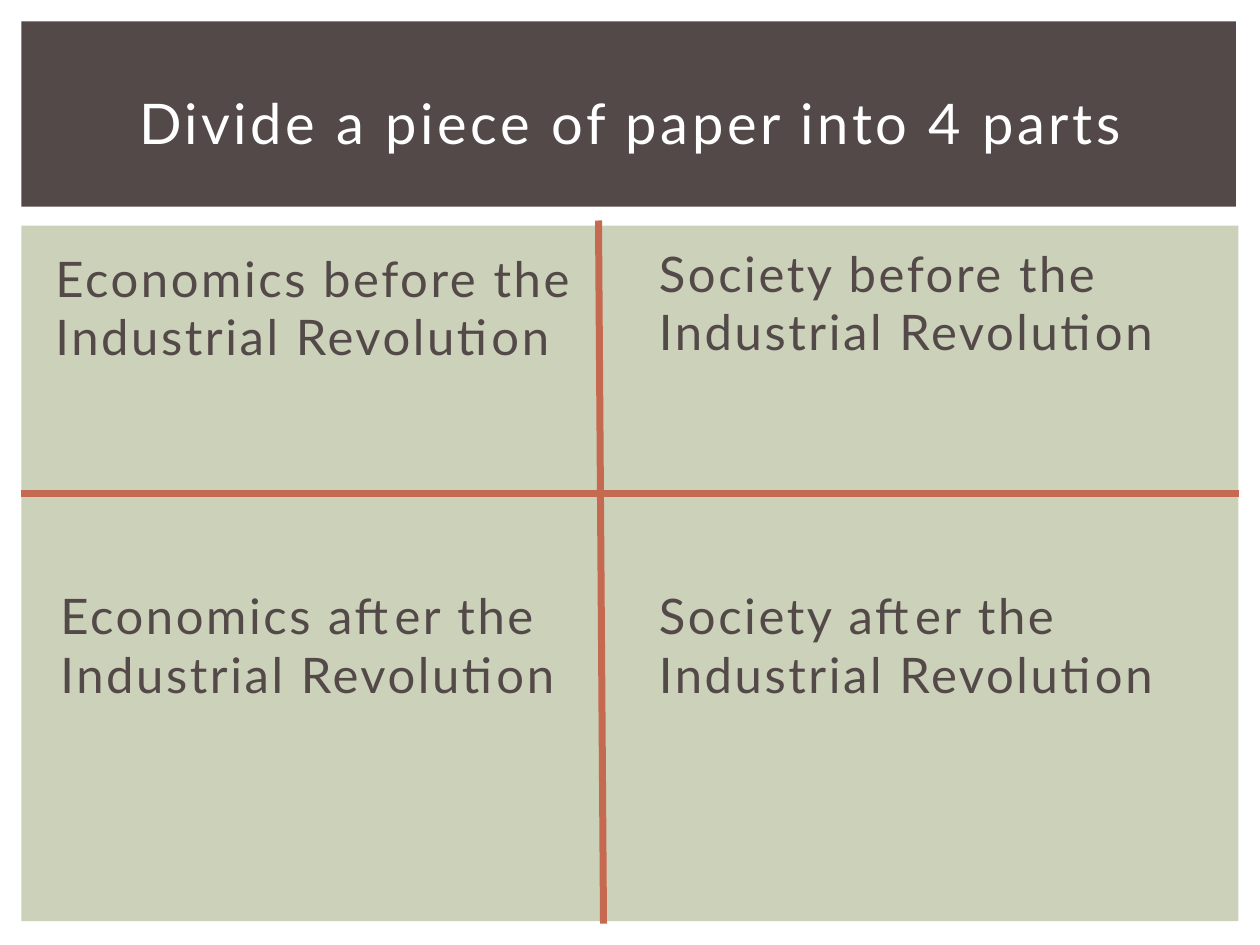
from lxml import etree
from pptx import Presentation
from pptx.dml.color import RGBColor
from pptx.enum.shapes import MSO_CONNECTOR, MSO_SHAPE
from pptx.enum.text import MSO_ANCHOR, PP_ALIGN
from pptx.oxml.ns import qn
from pptx.util import Inches, Pt

RECT = MSO_SHAPE.RECTANGLE
LINE = MSO_CONNECTOR.STRAIGHT
TOP, MIDDLE = MSO_ANCHOR.TOP, MSO_ANCHOR.MIDDLE
LEFT, CENTER = PP_ALIGN.LEFT, PP_ALIGN.CENTER
DARK, SAGE, RUST, WHITE = "534949", "CCD1B9", "C66951", "FFFFFF"


def paint(color, code):
    color.rgb = RGBColor.from_string(code)


def add_panel(slide, box, code):
    panel = slide.shapes.add_shape(RECT, *map(Inches, box))
    panel.shadow.inherit = False
    panel.fill.solid()
    paint(panel.fill.fore_color, code)
    panel.line.fill.background()


def add_text(slide, box, text, size=28, code=DARK, gap=1.5,
             align=LEFT, anchor=TOP, inset=0.15):
    frame = slide.shapes.add_textbox(*map(Inches, box)).text_frame
    frame.word_wrap = True
    frame.vertical_anchor = anchor
    frame.margin_left = Inches(inset)
    par = frame.paragraphs[0]
    par.alignment = align
    run = par.add_run()
    run.text = text
    run.font.name = "Lato"
    run.font.size = Pt(size)
    paint(run.font.color, code)
    run._r.get_or_add_rPr().set("spc", str(int(gap * 100)))


def add_rule(slide, start, end):
    rule = slide.shapes.add_connector(LINE, *map(Inches, start + end))
    rule.line.width = Pt(4)
    paint(rule.line.color, RUST)
    etree.SubElement(rule._element.spPr, qn("a:effectLst"))


def main():
    deck = Presentation()
    deck.slide_width, deck.slide_height = Inches(10), Inches(7.5)
    slide = deck.slides.add_slide(deck.slide_layouts[6])

    add_panel(slide, (0.17, 1.79, 9.66, 5.52), SAGE)
    add_panel(slide, (0.17, 0.17, 9.64, 1.47), DARK)
    add_text(slide, (0.42, 0.39, 9.17, 1.15),
             "Divide a piece of paper into 4 parts", size=32, code=WHITE,
             gap=2, align=CENTER, anchor=MIDDLE, inset=0.1)

    parts = [
        ("Economics before", 0.29, 1.92, 4.58),
        ("Society before", 5.08, 1.88, 4.42),
        ("Economics after", 0.33, 4.6, 4.42),
        ("Society after", 5.08, 4.6, 4.42),
    ]
    for topic, left, top, width in parts:
        add_text(slide, (left, top, width, 4.82),
                 f"{topic} the Industrial Revolution")

    add_rule(slide, (4.75, 1.75), (4.79, 7.33))
    add_rule(slide, (0.17, 3.92), (9.83, 3.92))
    deck.save("out.pptx")


if __name__ == "__main__":
    main()
